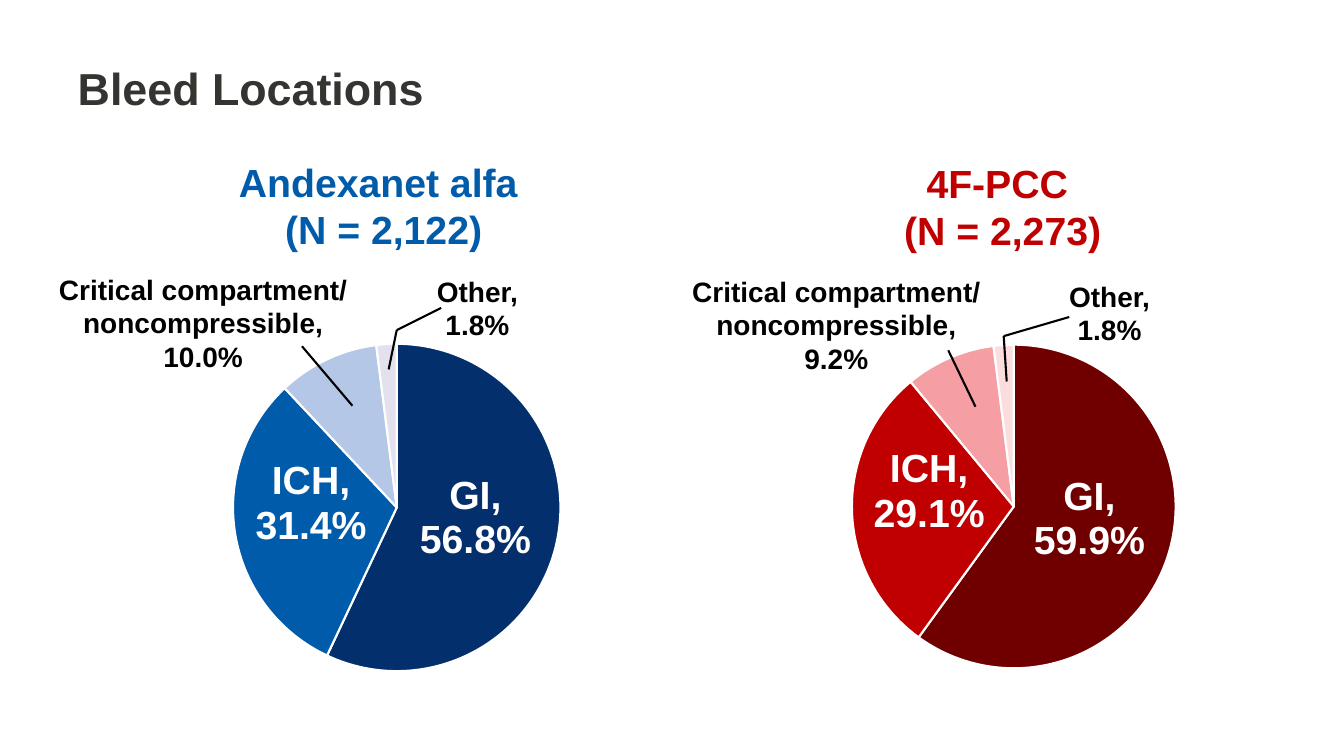
from lxml import etree
from pptx import Presentation
from pptx import util as u
from pptx.chart.data import CategoryChartData
from pptx.dml.color import RGBColor
from pptx.enum import chart as charts, shapes, text
from pptx.oxml import ns

COLORS = {"title": "343431", "blue": "005BAA", "red": "C00000",
          "black": "000000", "white": "FFFFFF"}
FONT = "Arial"
PIE_SHARE = 0.92  # pie diameter as a share of the chart's height

# Text formats: box size in inches, font size and exact line spacing in points
FORMATS = {
    "heading": {"box": (4.5, 1.04), "size": 28, "spacing": None},
    "other": {"box": (1.1, 0.77), "size": 20, "spacing": 24},
    "critical": {"box": (3.08, 1.11), "size": 20, "spacing": 24},
    "slice": {"box": (1.32, 1.0), "size": 28, "spacing": 32},
}

# Places of labels (centres) and leaders are inches from the pie's centre
ARMS = [
    {"box": (0.49, 3.27, 6.89, 3.53),
     "values": (57, 31, 10, 2),
     "slices": ("042F6D", "005BAA", "B4C7E7", "E4E1EF"),
     "labels": [
         ("heading", "blue", ("Andexanet alfa ", "(N = 2,122)"), (-0.13, -2.99)),
         ("other", "black", ("Other,", "1.8%"), (0.8, -1.98)),
         ("critical", "black",
          ("Critical compartment/", "noncompressible,", "10.0%"), (-1.92, -1.83)),
         ("slice", "white", ("GI,", "56.8%"), (0.78, 0.1)),
         ("slice", "white", ("ICH,", "31.4%"), (-0.85, -0.04))],
     "leaders": [((-0.44, -1.01), (-0.94, -1.6)),
                 ((-0.08, -1.37), (0, -1.76), (0.44, -1.98))]},
    {"box": (6.24, 3.28, 7.63, 3.49),
     "values": (60, 29, 9, 2),
     "slices": ("700000", "C00000", "F59EA3", "FBDDDE"),
     "labels": [
         ("heading", "red", ("4F-PCC ", "(N = 2,273)"), (-0.11, -2.97)),
         ("other", "black", ("Other,", "1.8%"), (0.95, -1.92)),
         ("critical", "black",
          ("Critical compartment/", "noncompressible,", "9.2%"), (-1.76, -1.8)),
         ("slice", "white", ("GI,", "59.9%"), (0.75, 0.12)),
         ("slice", "white", ("ICH,", "29.1%"), (-0.84, -0.15))],
     "leaders": [((-0.38, -0.99), (-0.65, -1.55)),
                 ((-0.07, -1.24), (-0.1, -1.69), (0.55, -1.88))]},
]


def rgb(name):
    return RGBColor.from_string(COLORS.get(name, name))


def format_font(font, size, color):
    for name, value in {"name": FONT, "size": u.Pt(size), "bold": True}.items():
        setattr(font, name, value)
    font.color.rgb = rgb(color)


def add_title(slide, box, wording):
    title = slide.shapes.title
    for name, value in zip(("left", "top", "width", "height"), box):
        setattr(title, name, u.Inches(value))
    title.text_frame.vertical_anchor = text.MSO_ANCHOR.MIDDLE
    paragraph = title.text_frame.paragraphs[0]
    paragraph.text = wording
    paragraph.alignment = text.PP_ALIGN.LEFT
    format_font(paragraph.runs[0].font, 32, "title")


def add_label(slide, center, kind, color, lines):
    style = FORMATS[kind]
    width, height = style["box"]
    box = (center[0] - width / 2, center[1] - height / 2, width, height)
    frame = slide.shapes.add_textbox(*map(u.Inches, box)).text_frame
    frame.word_wrap = kind == "heading"
    for index, line in enumerate(lines):
        paragraph = frame.add_paragraph() if index else frame.paragraphs[0]
        paragraph.alignment = text.PP_ALIGN.CENTER
        if style["spacing"]:
            paragraph.line_spacing = u.Pt(style["spacing"])
        run = paragraph.add_run()
        run.text = line
        format_font(run.font, style["size"], color)


def set_plot_layout(chart, width, height):
    """Centre the plot at the given shares of the chart's size."""
    plot_area = chart.plots[0]._element.getparent()
    for old in plot_area.findall(ns.qn("c:layout")):
        plot_area.remove(old)
    layout = etree.Element(ns.qn("c:layout"))
    manual = etree.SubElement(layout, ns.qn("c:manualLayout"))
    settings = {"layoutTarget": "inner", "xMode": "edge", "yMode": "edge",
                "x": (1 - width) / 2, "y": (1 - height) / 2,
                "w": width, "h": height}
    for tag, value in settings.items():
        etree.SubElement(manual, ns.qn(f"c:{tag}")).set("val", str(value))
    plot_area.insert(0, layout)


def add_pie(slide, box, values, slices):
    data = CategoryChartData()
    data.categories = ["1", "2", "3", "4"]
    data.add_series("Series 1", values)
    chart = slide.shapes.add_chart(
        charts.XL_CHART_TYPE.PIE, *map(u.Inches, box), data).chart
    chart.has_legend = chart.has_title = False
    chart.font.name, chart.font.size = FONT, u.Pt(10)
    chart.font.color.rgb = rgb("black")
    chart.plots[0].vary_by_categories = True
    set_plot_layout(chart, PIE_SHARE * box[3] / box[2], PIE_SHARE)
    points = chart.plots[0].series[0].points
    for index, color in enumerate(slices):
        style = points[index].format
        style.fill.solid()
        style.fill.fore_color.rgb = rgb(color)
        style.line.color.rgb = rgb("white")
        style.line.width = u.Pt(1.5)


def add_leader(slide, start, end):
    line = slide.shapes.add_connector(
        shapes.MSO_CONNECTOR.STRAIGHT, *map(u.Inches, (*start, *end)))
    line.line.color.rgb = rgb("black")
    line.line.width = u.Pt(1.5)
    etree.SubElement(line._element.spPr, ns.qn("a:effectLst"))


def add_arm(slide, box, arm):
    """Draw one treatment arm: its pie in the box, with labels and leaders."""
    left, top, width, height = box
    middle = (left + width / 2, top + height / 2)

    def place(offset):
        return middle[0] + offset[0], middle[1] + offset[1]

    add_pie(slide, box, arm["values"], arm["slices"])
    for kind, color, lines, offset in arm["labels"]:
        add_label(slide, place(offset), kind, color, lines)
    for route in arm["leaders"]:
        for start, end in zip(route, route[1:]):
            add_leader(slide, place(start), place(end))


def main():
    presentation = Presentation()
    presentation.slide_width = u.Inches(13.33)
    presentation.slide_height = u.Inches(7.5)
    slide = presentation.slides.add_slide(presentation.slide_layouts[5])
    add_title(slide, (0.67, 0.22, 11.75, 1.3), "Bleed Locations")
    for arm in ARMS:
        add_arm(slide, arm["box"], arm)
    presentation.save("out.pptx")


if __name__ == "__main__":
    main()
